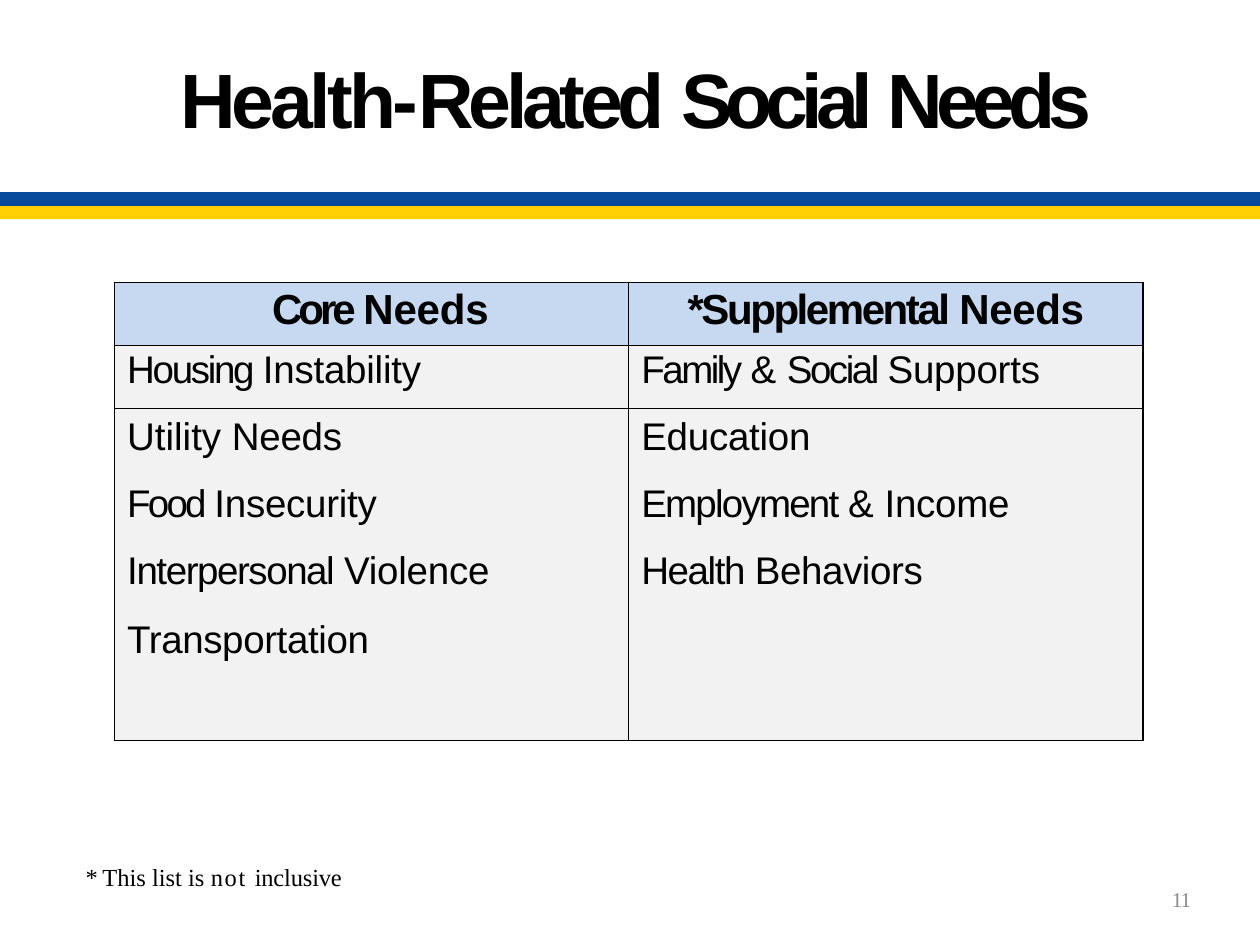
from lxml import etree
from pptx import Presentation
from pptx.dml.color import RGBColor
from pptx.enum.shapes import MSO_CONNECTOR, MSO_SHAPE
from pptx.enum.text import MSO_ANCHOR, PP_ALIGN
from pptx.oxml.ns import qn
from pptx.util import Inches, Pt

STRAIGHT = MSO_CONNECTOR.STRAIGHT
RECTANGLE = MSO_SHAPE.RECTANGLE
TOP = MSO_ANCHOR.TOP
LEFT, CENTER = PP_ALIGN.LEFT, PP_ALIGN.CENTER

THEME = {
    "sans": "Arial", "serif": "Times New Roman",
    "black": "000000", "gray": "898989", "blue": "084A9C", "yellow": "FFD004",
    "head": "C6D9F1", "body": "F2F2F2",
    "title_size": 44, "head_size": 24, "body_size": 22, "note_size": 14, "page_size": 12,
}

prs = Presentation()
prs.slide_width, prs.slide_height = Inches(10), Inches(7.5)
COL, ROW = prs.slide_width / 100, prs.slide_height / 75
s = prs.slides.add_slide(prs.slide_layouts[6])


def add_runs(p, runs, font, size, color, bold=False):
    for text, spacing in runs:
        r = p.add_run()
        r.text = text
        r.font.name, r.font.size, r.font.bold = THEME[font], Pt(THEME[size]), bold
        r.font.color.rgb = RGBColor.from_string(THEME[color])
        r.font._element.set("spc", str(round(spacing * 100)))


def add_border(tc_pr, side, visible):
    ln = etree.SubElement(tc_pr, qn(f"a:ln{side}"), w=str(Pt(1)))
    if visible:
        fill = etree.SubElement(ln, qn("a:solidFill"))
        etree.SubElement(fill, qn("a:srgbClr"), val=THEME["black"])
    else:
        etree.SubElement(ln, qn("a:noFill"))


band = s.shapes.add_shape(RECTANGLE, 0, int(16.3 * ROW), prs.slide_width, int(1.1 * ROW))
band.shadow.inherit = False
band.fill.solid()
band.fill.fore_color.rgb = RGBColor.from_string(THEME["yellow"])
band.line.fill.background()

rule = s.shapes.add_connector(STRAIGHT, 0, int(15.8 * ROW), prs.slide_width, int(15.8 * ROW))
rule.line.color.rgb = RGBColor.from_string(THEME["blue"])
rule.line.width = Pt(8)
etree.SubElement(rule._element.spPr, qn("a:effectLst"))

TEXTS = [
    ((5.4, -0.3, 89.2, 15.2), (8.9, 4.4), "sans", "title_size", "black", True, None,
     [("Health-", -2.2), ("Related ", -3), ("Social ", -4), ("Needs", -3.9)]),
    ((92.8, 70.6, 1.8, 1.9), (0.2, 0), "serif", "page_size", "gray", False, Pt(12.4),
     [("11", -0.5)]),
    ((6.7, 68, 21.2, 2.6), (0.1, 0.4), "serif", "note_size", "black", False, None,
     [("* ", -1), ("This list is ", 0), ("not ", 0.9), ("inclusive", -0.1)]),
]
for (x, y, w, h), (inset_x, inset_y), font, size, color, bold, leading, runs in TEXTS:
    sp = s.shapes.add_textbox(int(x * COL), int(y * ROW), int(w * COL), int(h * ROW))
    tf = sp.text_frame
    tf.word_wrap = True
    tf.vertical_anchor = TOP
    tf.margin_left, tf.margin_top = int(inset_x * COL), int(inset_y * ROW)
    tf.margin_right = tf.margin_bottom = 0
    p = tf.paragraphs[0]
    p.line_spacing = leading
    add_runs(p, runs, font, size, color, bold)

NEEDS = [
    ([("Core ", -2.3), ("Needs", -0.1)],
     [("*Supplemental ", -1.4), ("Needs", -0.2)]),
    ([("Housing ", -1.3), ("Instability", -0.1)],
     [("Family ", -1.4), ("& ", 0), ("Social ", -1.4), ("Supports", -0.1)]),
    ([("Utility ", 0), ("Needs", -0.1)],
     [("Education", -0.1)]),
    ([("Food ", -1.6), ("Insecurity", -0.1)],
     [("Employment ", -1), ("& ", 0), ("Income", -0.1)]),
    ([("Interpersonal ", -0.8), ("Violence", -0.1)],
     [("Health ", -0.8), ("Behaviors", -0.2)]),
    ([("Transportation", -0.2)], []),
]
HEIGHTS = [5, 5, 5.33, 5.33, 5.33, 10.4]
TOP_INSETS = [0.3, 0.3, 0.6, 0.6, 0.6, 0.7]
RULED_EDGES = {0, 1, 2, len(NEEDS)}
COLUMN_WIDTH = 40.8

table = s.shapes.add_table(len(NEEDS), 2, int(9.1 * COL), int(22.4 * ROW),
                           int(2 * COLUMN_WIDTH * COL), int(sum(HEIGHTS) * ROW)).table
for column in table.columns:
    column.width = int(COLUMN_WIDTH * COL)
for i, needs in enumerate(NEEDS):
    table.rows[i].height = int(HEIGHTS[i] * ROW)
    header = i == 0
    for j, runs in enumerate(needs):
        cell = table.cell(i, j)
        tc_pr = cell._tc.get_or_add_tcPr()
        for side, visible in (("L", True), ("R", True),
                              ("T", i in RULED_EDGES), ("B", i + 1 in RULED_EDGES)):
            add_border(tc_pr, side, visible)
        cell.fill.solid()
        cell.fill.fore_color.rgb = RGBColor.from_string(THEME["head" if header else "body"])
        cell.vertical_anchor = TOP
        cell.margin_left = int(((12.5, 0)[j] if header else 1) * COL)
        cell.margin_top = int(TOP_INSETS[i] * ROW)
        cell.margin_right = cell.margin_bottom = 0
        p = cell.text_frame.paragraphs[0]
        p.alignment = CENTER if header and j == 1 else LEFT
        add_runs(p, runs, "sans", "head_size" if header else "body_size", "black", header)

prs.save("out.pptx")
